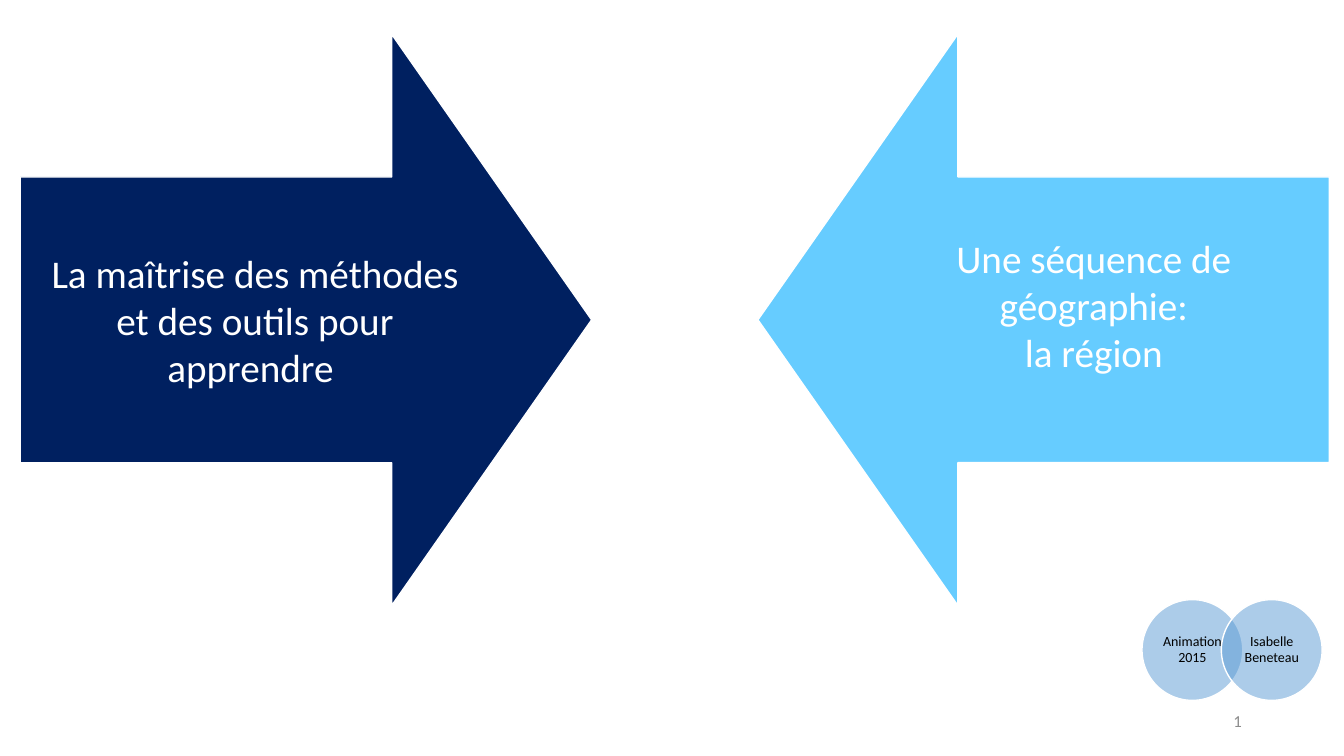
from lxml import etree
from pptx import Presentation
from pptx.dml.color import RGBColor
from pptx.enum.shapes import MSO_SHAPE
from pptx.enum.text import MSO_ANCHOR, PP_ALIGN
from pptx.oxml.ns import qn
from pptx.util import Cm, Pt

DOWN_ARROW = MSO_SHAPE.DOWN_ARROW
OVAL = MSO_SHAPE.OVAL
MIDDLE = MSO_ANCHOR.MIDDLE
CENTER = PP_ALIGN.CENTER
RIGHT = PP_ALIGN.RIGHT

FONT = "Calibri"
COLORS = {
    "navy": "002060",
    "sky": "66CCFF",
    "circle": "5B9BD5",
    "white": "FFFFFF",
    "black": "000000",
    "gray": "8C8C8C",
}

ARROW_TOP = 0.86
ARROW_SIZE = 14.4
ARROW_TEXT_TOP = 4.47
ARROW_TEXT_WIDTH = 11.89
ARROW_TEXT_HEIGHT = 7.19
CIRCLE_TOP = 15.11
CIRCLE_SIZE = 2.54
CIRCLE_TEXT_OFFSET = 0.37
CIRCLE_LEFT = 28.78
CIRCLE_STEP = 2


def color(name):
    return RGBColor.from_string(COLORS[name])


def add_filled_shape(slide, kind, left, top, size, fill):
    shape = slide.shapes.add_shape(kind, Cm(left), Cm(top), Cm(size), Cm(size))
    shape.shadow.inherit = False
    shape.fill.solid()
    shape.fill.fore_color.rgb = color(fill)
    shape.line.color.rgb = color("white")
    shape.line.width = Pt(1)
    return shape


def add_text(slide, box, lines, size, font_color, insets, alignment=CENTER, spacing=None):
    shape = slide.shapes.add_textbox(*(Cm(length) for length in box))
    frame = shape.text_frame
    frame.word_wrap = True
    frame.vertical_anchor = MIDDLE
    frame.margin_left, frame.margin_top, frame.margin_right, frame.margin_bottom = (
        Cm(inset) for inset in insets
    )
    for index, line in enumerate(lines):
        paragraph = frame.add_paragraph() if index else frame.paragraphs[0]
        paragraph.alignment = alignment
        if spacing:
            paragraph.line_spacing = spacing
        run = paragraph.add_run()
        run.text = line
        run.font.name = FONT
        run.font.size = Pt(size)
        run.font.color.rgb = color(font_color)


def add_arrow(slide, left, rotation, fill, text_left, lines, bottom_inset):
    arrow = add_filled_shape(slide, DOWN_ARROW, left, ARROW_TOP, ARROW_SIZE, fill)
    arrow.rotation = rotation
    arrow.adjustments[0] = 0.5
    arrow.adjustments[1] = 0.35
    box = (text_left, ARROW_TEXT_TOP, ARROW_TEXT_WIDTH, ARROW_TEXT_HEIGHT)
    add_text(slide, box, lines, 28, "white", (0.56, 0.56, 0.56, bottom_inset))


def add_circle(slide, left, label):
    circle = add_filled_shape(slide, OVAL, left, CIRCLE_TOP, CIRCLE_SIZE, "circle")
    fill_color = circle.fill._xPr.find(qn("a:solidFill"))[0]
    etree.SubElement(fill_color, qn("a:alpha"), val="50000")
    text_size = CIRCLE_SIZE - 2 * CIRCLE_TEXT_OFFSET
    box = (left + CIRCLE_TEXT_OFFSET, CIRCLE_TOP + CIRCLE_TEXT_OFFSET, text_size, text_size)
    add_text(slide, box, [label], 10, "black", (0.13, 0.03, 0.13, 0.03), spacing=0.9)


def main():
    presentation = Presentation()
    presentation.slide_width = Cm(33.87)
    presentation.slide_height = Cm(19.05)
    slide = presentation.slides.add_slide(presentation.slide_layouts[6])

    add_arrow(slide, 0.51, 270, "navy", 0.48,
              ["La maîtrise des méthodes et des outils pour apprendre "], 0.56)
    add_arrow(slide, 19.1, 90, "sky", 21.62,
              ["Une séquence de géographie:", "la région"], 1.33)
    for index, label in enumerate(["Animation 2015", "Isabelle Beneteau"]):
        add_circle(slide, CIRCLE_LEFT + index * CIRCLE_STEP, label)
    add_text(slide, (23.93, 17.65, 7.62, 1.02), ["1"], 12, "gray",
             (0.25, 0.13, 0.25, 0.13), RIGHT)

    presentation.save("out.pptx")


if __name__ == "__main__":
    main()
